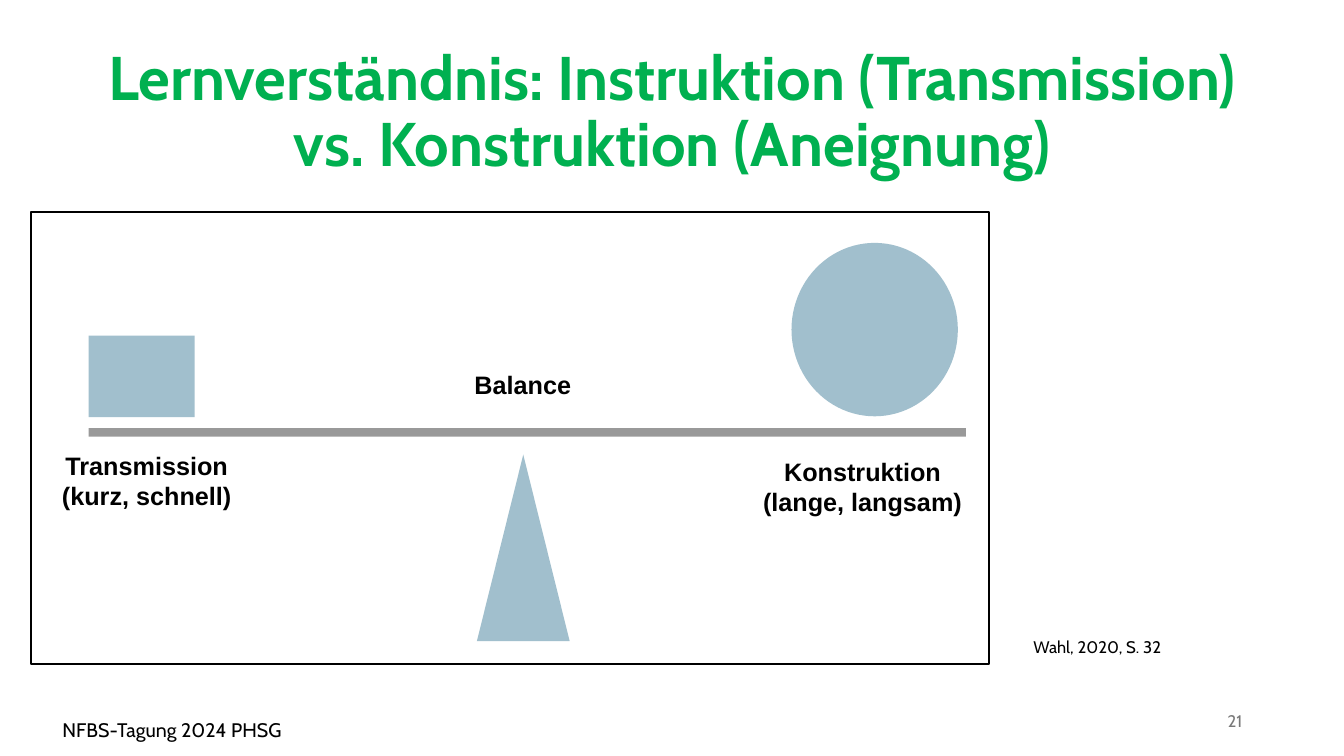
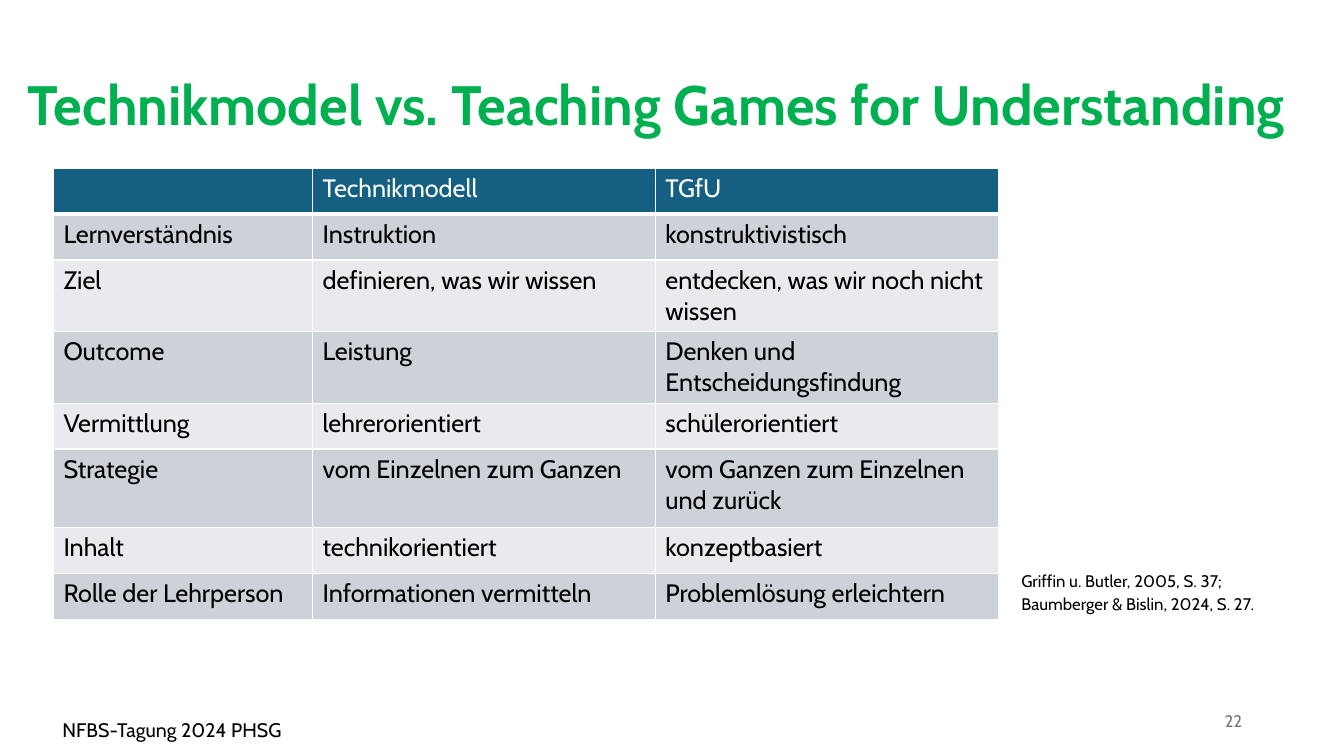
from dataclasses import dataclass

import pptx
import pptx.dml.color
import pptx.enum.shapes
import pptx.enum.text
import pptx.oxml
import pptx.oxml.ns
import pptx.util

Align = pptx.enum.text.PP_ALIGN
Anchor = pptx.enum.text.MSO_ANCHOR
Shape = pptx.enum.shapes.MSO_SHAPE


@dataclass(frozen=True)
class Theme:
    """Colours, fonts and type sizes of all slides."""
    green: str = "00B050"
    blue: str = "156082"
    black: str = "000000"
    white: str = "FFFFFF"
    grey: str = "797979"
    bands: tuple = ("CCD2D8", "E8EAED")
    opacity: int = 40
    font: str = "Cabin"
    diagram_font: str = "Arial"
    title: float = 44
    long_title: float = 39.6
    body: float = 18
    footer: float = 14
    small: float = 12


THEME = Theme()
GRID = 0.1  # inches per column and per row


@dataclass(frozen=True)
class Box:
    """A region in grid columns and rows."""
    left: float
    top: float
    width: float
    height: float

    def within(self, left, top, width, height):
        return Box(self.left + left, self.top + top, width, height)

    def lengths(self):
        return [pptx.util.Inches(GRID * value)
                for value in (self.left, self.top, self.width, self.height)]


SLIDE = Box(0, 0, 133.3, 75)


def color(value):
    return pptx.dml.color.RGBColor.from_string(value)


def add_run(paragraph, text, size, ink=THEME.black, font=THEME.font, bold=False):
    run = paragraph.add_run()
    run.text = text
    run.font.name = font
    run.font.size = pptx.util.Pt(size)
    run.font.bold = bold
    run.font.color.rgb = color(ink)


def add_text(slide, box, lines, size, align=Align.LEFT, spacing=None,
             anchor=Anchor.TOP, inset=True, **style):
    frame = slide.shapes.add_textbox(*box.lengths()).text_frame
    frame.word_wrap = True
    frame.vertical_anchor = anchor
    if not inset:
        frame.margin_left = frame.margin_right = 0
        frame.margin_top = frame.margin_bottom = 0
    for index, line in enumerate(lines):
        paragraph = frame.add_paragraph() if index else frame.paragraphs[0]
        paragraph.alignment = align
        paragraph.line_spacing = spacing
        add_run(paragraph, line, size, **style)


def make_translucent(shape):
    for node in shape.element.spPr.iter(pptx.oxml.ns.qn("a:srgbClr")):
        pptx.oxml.ns  # namespace helpers
        alpha = node.makeelement(pptx.oxml.ns.qn("a:alpha"),
                                 {"val": str(THEME.opacity * 1000)})
        node.append(alpha)


def add_shape(slide, kind, box, fill=None, line=None):
    shape = slide.shapes.add_shape(kind, *box.lengths())
    shape.shadow.inherit = False
    if fill:
        shape.fill.solid()
        shape.fill.fore_color.rgb = color(fill)
        make_translucent(shape)
    else:
        shape.fill.background()
    if line:
        shape.line.color.rgb = color(line)
        shape.line.width = pptx.util.Pt(1.5)
    else:
        shape.line.fill.background()
    return shape


# Shared frame: title, page number, footer

def add_slide(presentation, title, title_box, size, align, number):
    slide = presentation.slides.add_slide(presentation.slide_layouts[5])
    heading = slide.shapes.title
    heading.left, heading.top, heading.width, heading.height = title_box.lengths()
    frame = heading.text_frame
    frame.word_wrap = True
    frame.auto_size = pptx.enum.text.MSO_AUTO_SIZE.NONE
    frame.vertical_anchor = Anchor.MIDDLE
    paragraph = frame.paragraphs[0]
    paragraph.alignment = align
    paragraph.line_spacing = 0.9
    add_run(paragraph, title, size, THEME.green, bold=True)

    add_text(slide, SLIDE.within(94.2, 69.5, 30, 4), [str(number)], THEME.small,
             Align.RIGHT, anchor=Anchor.MIDDLE, ink=THEME.grey)
    add_text(slide, SLIDE.within(5.2, 70.7, 86.1, 3.4),
             ["NFBS-Tagung 2024 PHSG"], THEME.footer)
    return slide


def add_source(slide, box, text):
    add_text(slide, box, [text], THEME.small, spacing=1.12, inset=False)


# Seesaw diagram

def add_seesaw(slide, panel):
    add_shape(slide, Shape.RECTANGLE, panel, line=THEME.black)
    weights = (
        (Shape.RECTANGLE, (5.7, 12.3, 10.5, 8.1)),
        (Shape.OVAL, (75.4, 3.1, 16.5, 17.2)),
        (Shape.ISOSCELES_TRIANGLE, (44.2, 24.1, 9.2, 18.5)),
    )
    for kind, place in weights:
        add_shape(slide, kind, panel.within(*place), fill=THEME.blue)

    labels = (
        (("Balance",), (40.7, 16.5, 16.1, 5.2), pptx.util.Pt(12)),
        (("Transmission", "(kurz, schnell)"), (2, 23.2, 18.9, 8.1), None),
        (("Konstruktion", "(lange, langsam)"), (71.4, 23.8, 22.1, 8), None),
    )
    for lines, place, spacing in labels:
        add_text(slide, panel.within(*place), lines, THEME.body, Align.CENTER,
                 spacing, font=THEME.diagram_font, bold=True)

    # Beam
    left, top, width, _ = panel.within(5.7, 21.9, 87, 0).lengths()
    beam = slide.shapes.add_connector(
        pptx.enum.shapes.MSO_CONNECTOR.STRAIGHT, left, top, left + width, top)
    beam.line.color.rgb = color(THEME.black)
    beam.line.width = pptx.util.Pt(6)
    make_translucent(beam)
    properties = beam.element.spPr
    properties.append(properties.makeelement(pptx.oxml.ns.qn("a:effectLst"), {}))


# Comparison table

def set_borders(cell, bottom):
    namespace = pptx.oxml.ns.nsdecls("a")
    properties = cell._tc.get_or_add_tcPr()
    for side, width in (("L", 1), ("R", 1), ("T", 1), ("B", bottom)):
        properties.append(pptx.oxml.parse_xml(
            f'<a:ln{side} {namespace} w="{pptx.util.Pt(width)}"><a:solidFill>'
            f'<a:srgbClr val="{THEME.white}"/></a:solidFill></a:ln{side}>'))


def add_comparison(slide, box, rows, widths, heights):
    table = slide.shapes.add_table(len(rows), len(widths), *box.lengths()).table
    for column, width in zip(table.columns, widths):
        column.width = pptx.util.Inches(GRID * width)
    for row, height in zip(table.rows, heights):
        row.height = pptx.util.Inches(GRID * height)
    for row_index, texts in enumerate(rows):
        header = row_index == 0
        fill = THEME.blue if header else THEME.bands[(row_index - 1) % 2]
        for column_index, text in enumerate(texts):
            cell = table.cell(row_index, column_index)
            set_borders(cell, 3 if header else 1)
            cell.fill.solid()
            cell.fill.fore_color.rgb = color(fill)
            if text:
                add_run(cell.text_frame.paragraphs[0], text, THEME.body,
                        THEME.white if header else THEME.black)


# Slides

def build_learning_slide(presentation):
    slide = add_slide(
        presentation,
        "Lernverständnis: Instruktion (Transmission) vs. Konstruktion (Aneignung)",
        SLIDE.within(9.2, 4, 115, 14.5), THEME.title, Align.CENTER, 21)
    add_seesaw(slide, SLIDE.within(3.1, 21, 95, 44.9))
    add_source(slide, SLIDE.within(102.5, 62.9, 22.8, 2.9), "Wahl, 2020, S. 32")


def build_model_slide(presentation):
    slide = add_slide(
        presentation, "Technikmodel vs. Teaching Games for Understanding",
        SLIDE.within(1.7, 6, 130.2, 9.4), THEME.long_title, Align.LEFT, 22)
    rows = (
        ("", "Technikmodell", "TGfU"),
        ("Lernverständnis", "Instruktion", "konstruktivistisch"),
        ("Ziel", "definieren, was wir wissen", "entdecken, was wir noch nicht wissen"),
        ("Outcome", "Leistung", "Denken und Entscheidungsfindung"),
        ("Vermittlung", "lehrerorientiert", "schülerorientiert"),
        ("Strategie", "vom Einzelnen zum Ganzen", "vom Ganzen zum Einzelnen und zurück"),
        ("Inhalt", "technikorientiert", "konzeptbasiert"),
        ("Rolle der Lehrperson", "Informationen vermitteln", "Problemlösung erleichtern"),
    )
    single, double, tall = 4.55, 7.1, 7.8
    heights = (single, single, double, double, single, tall, single, single)
    widths = (25.7, 34, 34)
    add_comparison(slide, SLIDE.within(5.3, 16.7, sum(widths), sum(heights)),
                   rows, widths, heights)
    add_source(slide, SLIDE.within(101.3, 56.4, 28.6, 6),
               "Griffin u. Butler, 2005, S. 37; Baumberger & Bislin, 2024, S. 27.")


def main():
    presentation = pptx.Presentation()
    _, _, presentation.slide_width, presentation.slide_height = SLIDE.lengths()
    build_learning_slide(presentation)
    build_model_slide(presentation)
    presentation.save("out.pptx")


if __name__ == "__main__":
    main()
